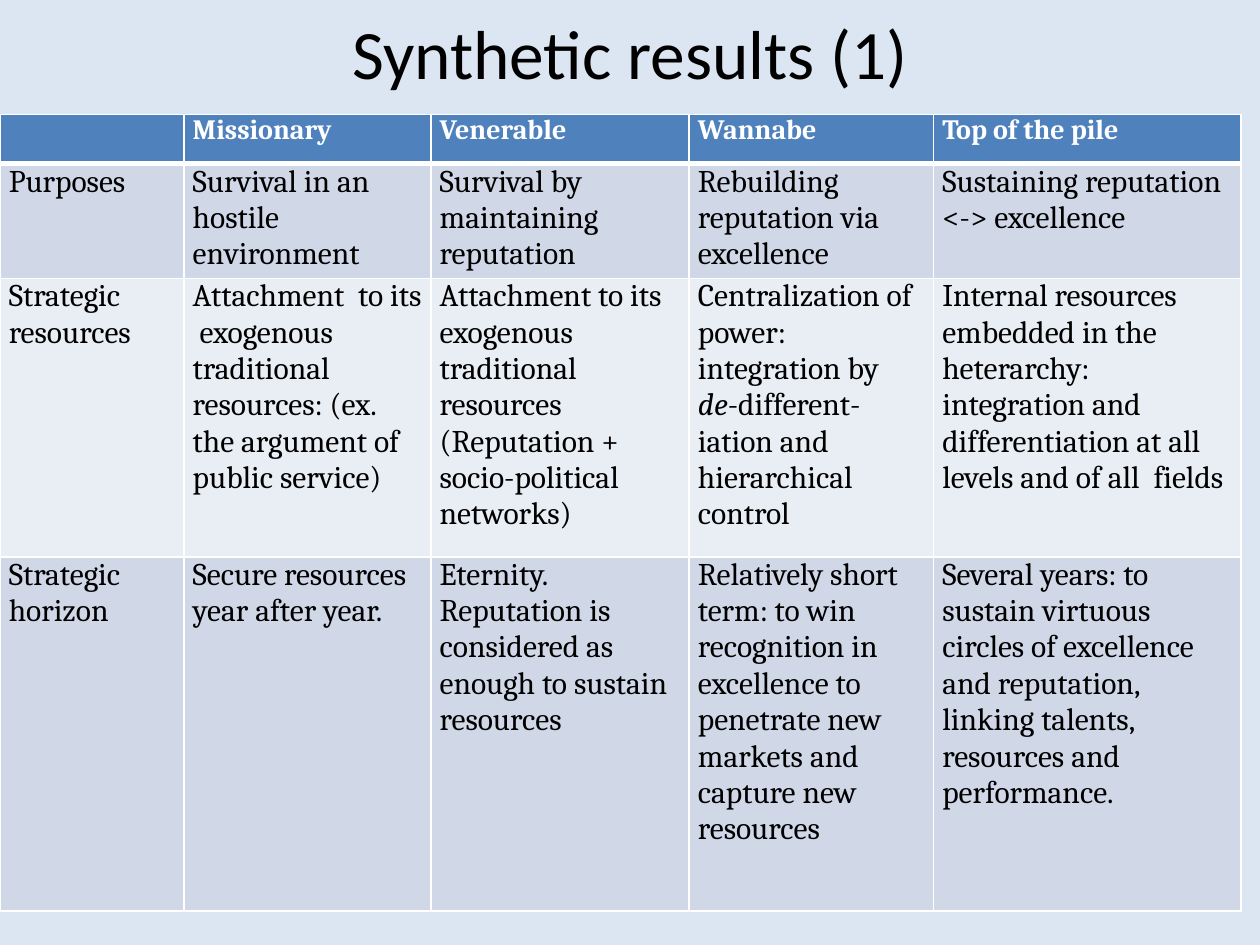
from dataclasses import dataclass

from lxml.etree import SubElement
from pptx import Presentation
from pptx.dml.color import RGBColor
from pptx.enum.text import MSO_ANCHOR, PP_ALIGN
from pptx.oxml.ns import qn
from pptx.util import Inches, Pt


@dataclass(frozen=True)
class Theme:
    back: str = "DCE6F2"
    head: str = "4F81BD"
    bands: tuple = ("D0D8E8", "E9EDF4")
    ink: str = "000000"
    white: str = "FFFFFF"
    title_font: str = "Calibri"
    body_font: str = "Cambria"
    title_size: float = 39.6
    head_size: float = 16
    body_size: float = 18
    line: float = 1
    rule: float = 3


THEME = Theme()
COLS = (1.46, 1.96, 2.05, 1.94, 2.44)
ROWS = (0.39, 0.91, 2.21, 2.81)
# A cell is a string, or a list of paragraphs; a paragraph is a string,
# or a list of (text, italic) runs.
CELLS = (
    ("", "Missionary", "Venerable", "Wannabe", "Top of the pile"),
    (
        "Purposes",
        "Survival in an hostile environment",
        "Survival by maintaining reputation",
        "Rebuilding reputation via excellence",
        "Sustaining reputation <-> excellence",
    ),
    (
        "Strategic resources",
        "Attachment  to its  exogenous traditional resources: "
        "(ex. the argument of public service)",
        "Attachment to its exogenous traditional resources "
        "(Reputation + socio-political networks)",
        [[
            ("Centralization of power: integration by ", False),
            ("de", True),
            ("-different-iation and hierarchical control", False),
        ]],
        "Internal resources embedded in the heterarchy: integration and "
        "differentiation at all levels and of all  fields",
    ),
    (
        "Strategic horizon",
        "Secure resources year after year.",
        ["Eternity.", "Reputation is considered as enough to sustain resources"],
        "Relatively short term: to win recognition in excellence to penetrate "
        "new markets and capture new resources",
        "Several years: to sustain virtuous circles of excellence and "
        "reputation, linking talents, resources and performance.",
    ),
)


def paint(fill, color):
    fill.solid()
    fill.fore_color.rgb = RGBColor.from_string(color)


def add_run(para, text, font, size, color, bold=False, italic=False):
    run = para.add_run()
    run.text = text
    run.font.name = font
    run.font.size = Pt(size)
    run.font.bold = bold
    run.font.italic = italic
    run.font.color.rgb = RGBColor.from_string(color)


def add_title(slide, text):
    box = slide.shapes.add_textbox(Inches(0.5), Inches(0.07), Inches(9), Inches(0.68))
    frame = box.text_frame
    frame.word_wrap = True
    frame.vertical_anchor = MSO_ANCHOR.MIDDLE
    para = frame.paragraphs[0]
    para.alignment = PP_ALIGN.CENTER
    add_run(para, text, THEME.title_font, THEME.title_size, THEME.ink)


def add_edges(cell, row):
    """Draw white cell borders, with a thick rule under the header row."""
    props = cell._tc.get_or_add_tcPr()
    widths = {
        "L": THEME.line,
        "R": THEME.line,
        "T": THEME.rule if row == 1 else THEME.line,
        "B": THEME.rule if row == 0 else THEME.line,
    }
    for side, width in widths.items():
        line = SubElement(props, qn(f"a:ln{side}"), w=str(Pt(width)))
        solid = SubElement(line, qn("a:solidFill"))
        SubElement(solid, qn("a:srgbClr"), val=THEME.white)


def fill_cell(cell, content, row):
    head = row == 0
    cell.margin_left = cell.margin_right = Inches(0.07)
    cell.margin_top = cell.margin_bottom = 0
    add_edges(cell, row)
    paint(cell.fill, THEME.head if head else THEME.bands[(row - 1) % 2])
    if not content:
        return
    size = THEME.head_size if head else THEME.body_size
    color = THEME.white if head else THEME.ink
    frame = cell.text_frame
    paras = [content] if isinstance(content, str) else content
    for index, runs in enumerate(paras):
        para = frame.add_paragraph() if index else frame.paragraphs[0]
        for text, italic in [(runs, False)] if isinstance(runs, str) else runs:
            add_run(para, text, THEME.body_font, size, color, head, italic)


def add_grid(slide):
    frame = slide.shapes.add_table(
        len(ROWS), len(COLS), Inches(0), Inches(0.91),
        Inches(sum(COLS)), Inches(sum(ROWS)),
    )
    table = frame.table
    for col, width in zip(table.columns, COLS):
        col.width = Inches(width)
    for row, height in zip(table.rows, ROWS):
        row.height = Inches(height)
    for r, line in enumerate(CELLS):
        for c, content in enumerate(line):
            fill_cell(table.cell(r, c), content, r)


def main():
    deck = Presentation()
    deck.slide_width, deck.slide_height = Inches(10), Inches(7.5)
    slide = deck.slides.add_slide(deck.slide_layouts[6])
    paint(slide.background.fill, THEME.back)
    add_title(slide, "Synthetic results (1)")
    add_grid(slide)
    deck.save("out.pptx")


if __name__ == "__main__":
    main()
